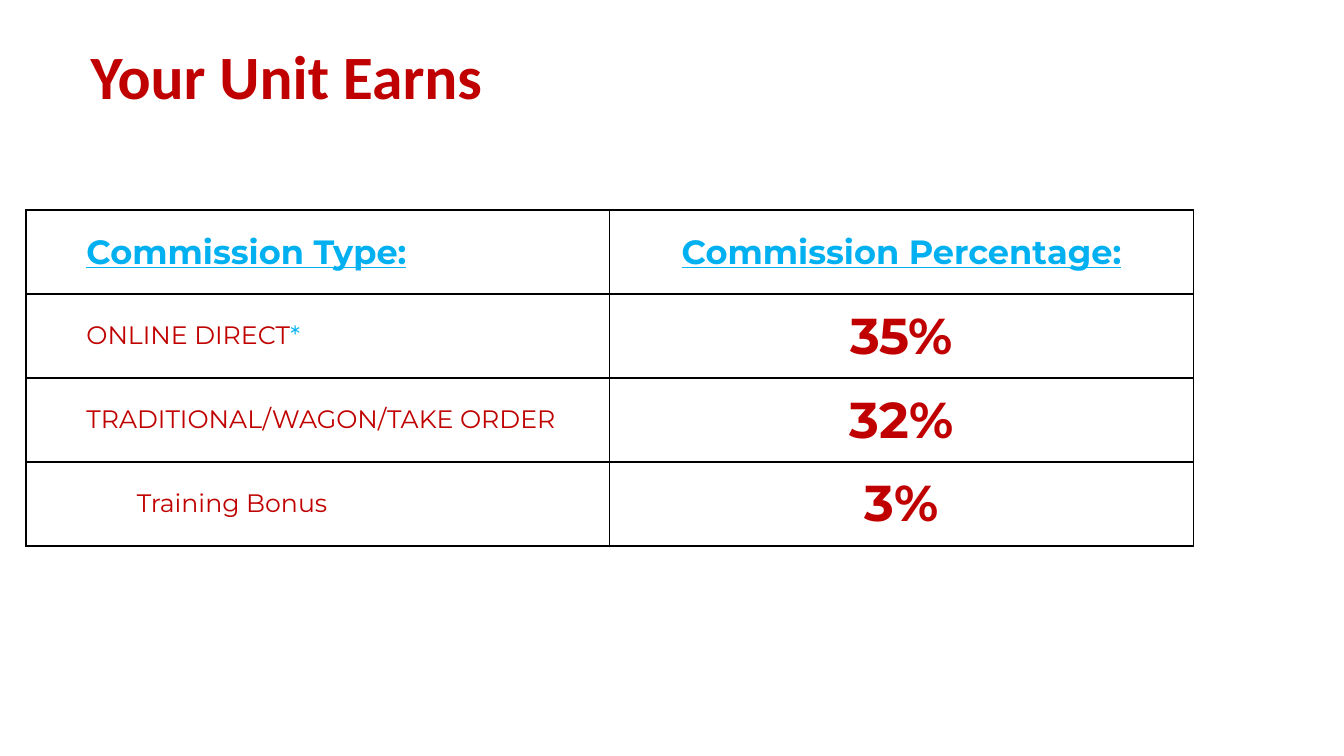
from pptx import Presentation
from pptx.dml.color import RGBColor
from pptx.enum import text
from pptx.oxml import parse_xml
from pptx.oxml.ns import nsdecls
from pptx.util import Pt

# Content: each cell is a style, an indent level and its runs (words, colour)
TITLE = "Your Unit Earns"
ROWS = [
    (("header", 1, [("Commission Type:", "blue")]),
     ("header", 0, [("Commission Percentage:", "blue")])),
    (("label", 1, [("ONLINE DIRECT", "red"), ("*", "blue")]),
     ("percent", 0, [("35%", "red")])),
    (("label", 1, [("TRADITIONAL/WAGON/TAKE ORDER", "red")]),
     ("percent", 0, [("32%", "red")])),
    (("label", 2, [("Training Bonus", "red")]),
     ("percent", 0, [("3%", "red")])),
]

# Formats
COLORS = {"red": "C00000", "blue": "00B0F0", "border": "000000"}
STYLES = {
    "title": {"name": "Calibri", "size": Pt(44), "bold": True},
    "header": {"name": "Montserrat", "size": Pt(24), "bold": True, "underline": True},
    "label": {"name": "Montserrat", "size": Pt(18), "bold": False},
    "percent": {"name": "Montserrat", "size": Pt(36), "bold": True},
}
COLUMN_WIDTH, ROW_HEIGHT, INDENT = Pt(417), Pt(60), Pt(36)


def add_run(paragraph, words, style, color):
    run = paragraph.add_run()
    run.text = words
    for key, value in STYLES[style].items():
        setattr(run.font, key, value)
    run.font.color.rgb = RGBColor.from_string(COLORS[color])


def add_borders(cell):
    properties = cell._tc.get_or_add_tcPr()
    for position, side in enumerate(("lnL", "lnR", "lnT", "lnB")):
        properties.insert(position, parse_xml(
            f'<a:{side} {nsdecls("a")} w="{Pt(1)}"><a:solidFill>'
            f'<a:srgbClr val="{COLORS["border"]}"/></a:solidFill></a:{side}>'))


def fill_cell(cell, style, level, runs):
    cell.fill.background()
    add_borders(cell)
    cell.vertical_anchor = text.MSO_ANCHOR.MIDDLE
    paragraph = cell.text_frame.paragraphs[0]
    if level:
        paragraph.level = level
        properties = paragraph._p.get_or_add_pPr()
        properties.set("marL", str(level * INDENT))
        properties.set("indent", "0")
    else:
        paragraph.alignment = text.PP_ALIGN.CENTER
    for words, color in runs:
        add_run(paragraph, words, style, color)


presentation = Presentation()
presentation.slide_width, presentation.slide_height = Pt(960), Pt(540)
slide = presentation.slides.add_slide(presentation.slide_layouts[6])

# Title
title = slide.shapes.add_textbox(Pt(57.6), Pt(23.8), Pt(520), Pt(55.4))
title.text_frame.word_wrap = True
add_run(title.text_frame.paragraphs[0], TITLE, "title", "red")

# Commission table
column_count = len(ROWS[0])
table = slide.shapes.add_table(
    len(ROWS), column_count, Pt(18.5), Pt(150),
    COLUMN_WIDTH * column_count, ROW_HEIGHT * len(ROWS)).table
table.first_row = table.horz_banding = False
for row_index, row in enumerate(ROWS):
    for column_index, content in enumerate(row):
        fill_cell(table.cell(row_index, column_index), *content)

presentation.save("out.pptx")
